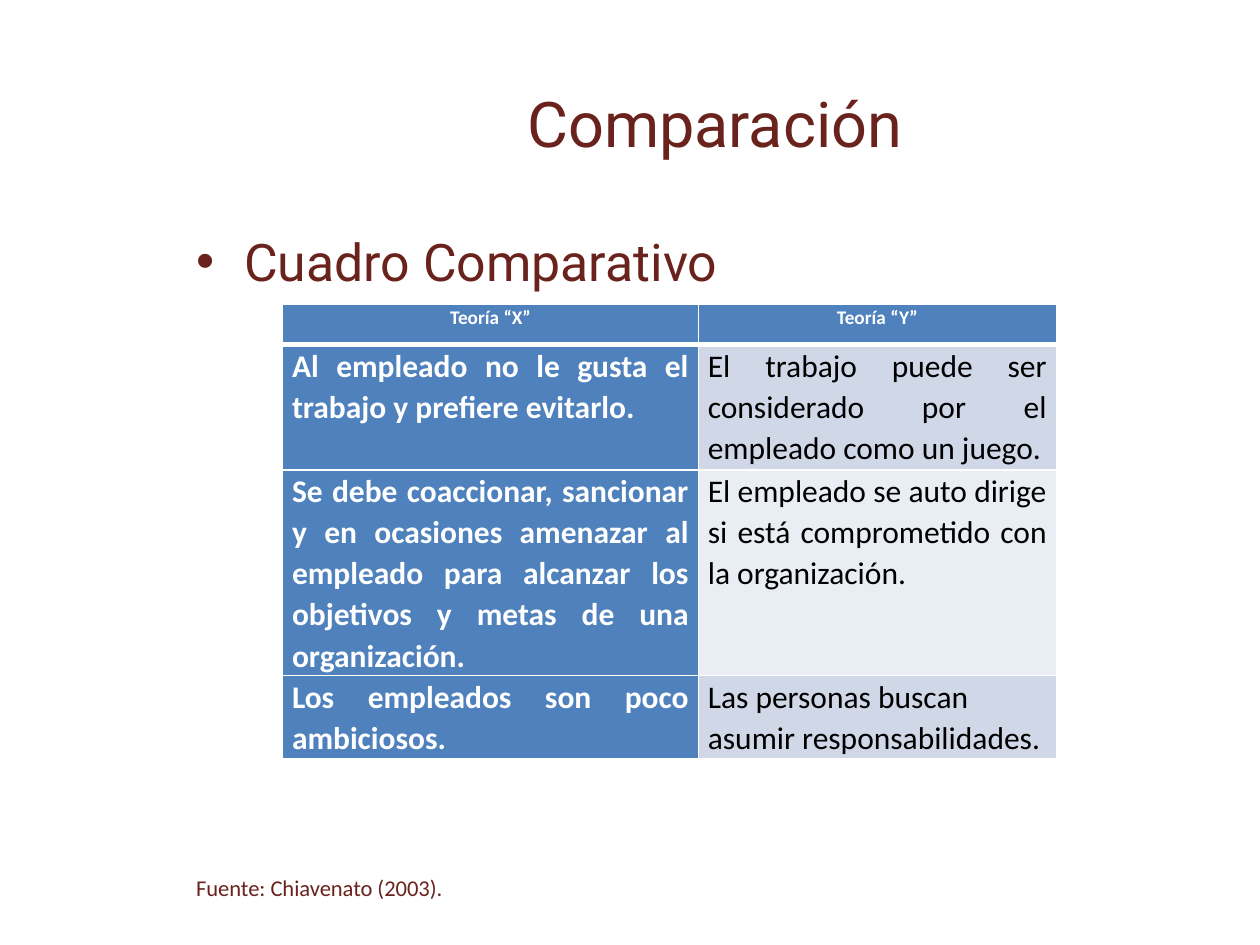
from lxml.etree import SubElement
from pptx import Presentation
from pptx.dml.color import RGBColor
from pptx.enum.text import MSO_ANCHOR as Anchor, PP_ALIGN as Align
from pptx.oxml.ns import qn
from pptx.util import Pt

MAROON, WHITE, BLACK = "6A221D", "FFFFFF", "000000"
BLUE, PALE_BLUE, PALEST_BLUE = "4F81BD", "D0D8E8", "E9EDF4"

HEADERS = ("Teoría “X”", "Teoría “Y”")
COMPARISONS = (
    ("Al empleado no le gusta el trabajo y prefiere evitarlo.",
     "El trabajo puede ser considerado por el empleado como un juego."),
    ("Se debe coaccionar, sancionar y en ocasiones amenazar al empleado "
     "para alcanzar los objetivos y metas de una organización.",
     "El empleado se auto dirige si está comprometido con la organización."),
    ("Los empleados son poco ambiciosos.",
     "Las personas buscan asumir responsabilidades."),
)
COLUMN_WIDTHS = (237.6, 204.5)
ROW_HEIGHTS = (23, 71.5, 117.5, 47.5)


def color(hex_string):
    return RGBColor.from_string(hex_string)


def style(paragraph, font_name, size, hex_string, bold=False, align=Align.LEFT):
    paragraph.alignment = align
    font = paragraph.font
    font.name, font.size, font.bold = font_name, Pt(size), bold
    font.color.rgb = color(hex_string)


def add_text(slide, text, box, anchor=Anchor.TOP):
    """Add a wrapped text box and return its paragraph."""
    frame = slide.shapes.add_textbox(*map(Pt, box)).text_frame
    frame.word_wrap = True
    frame.vertical_anchor = anchor
    frame.text = text
    return frame.paragraphs[0]


def add_bullet(paragraph, indent):
    properties = paragraph._p.get_or_add_pPr()
    properties.set("marL", str(Pt(indent)))
    properties.set("indent", str(-Pt(indent)))
    SubElement(properties, qn("a:buFont"), typeface="Arial")
    SubElement(properties, qn("a:buChar"), char="•")


def set_borders(cell, **widths):
    """Draw white borders; the sides are given in the order L, R, T, B."""
    properties = cell._tc.get_or_add_tcPr()
    for side, width in widths.items():
        line = SubElement(properties, qn(f"a:ln{side}"), w=str(Pt(width)))
        fill = SubElement(line, qn("a:solidFill"))
        SubElement(fill, qn("a:srgbClr"), val=WHITE)


def fill_cell(cell, text, background, top_border, bottom_border, **text_style):
    set_borders(cell, L=1, R=1, T=top_border, B=bottom_border)
    cell.fill.solid()
    cell.fill.fore_color.rgb = color(background)
    cell.margin_left = cell.margin_right = Pt(5.4)
    cell.margin_top = cell.margin_bottom = 0
    cell.text = text
    paragraph = cell.text_frame.paragraphs[0]
    paragraph.line_spacing = 1.07
    style(paragraph, "Calibri", **text_style)


def add_comparison(slide):
    table = slide.shapes.add_table(
        len(ROW_HEIGHTS), len(COLUMN_WIDTHS), Pt(161.5), Pt(174),
        Pt(sum(COLUMN_WIDTHS)), Pt(sum(ROW_HEIGHTS))).table
    for column, width in zip(table.columns, COLUMN_WIDTHS):
        column.width = Pt(width)
    for row, height in zip(table.rows, ROW_HEIGHTS):
        row.height = Pt(height)

    for column, header in enumerate(HEADERS):
        fill_cell(table.cell(0, column), header, BLUE, 1, 3,
                  size=11, hex_string=WHITE, bold=True, align=Align.CENTER)
    last = len(COMPARISONS)
    for row, (theory_x, theory_y) in enumerate(COMPARISONS, start=1):
        top_border = 3 if row == 1 else 1
        fill_cell(table.cell(row, 0), theory_x, BLUE, top_border, 1,
                  size=18, hex_string=WHITE, bold=True, align=Align.JUSTIFY)
        fill_cell(table.cell(row, 1), theory_y,
                  PALE_BLUE if row % 2 else PALEST_BLUE, top_border, 1,
                  size=18, hex_string=BLACK,
                  align=Align.LEFT if row == last else Align.JUSTIFY)


def main():
    presentation = Presentation()
    presentation.slide_width, presentation.slide_height = Pt(720), Pt(540)
    slide = presentation.slides.add_slide(presentation.slide_layouts[6])

    title = add_text(slide, "Comparación", (133, 25, 551, 90), Anchor.MIDDLE)
    style(title, "Roboto", 36, MAROON, align=Align.CENTER)

    subtitle = add_text(slide, "Cuadro Comparativo", (105, 127.5, 579, 45))
    add_bullet(subtitle, 27.4)
    style(subtitle, "Roboto", 29.6, MAROON)

    add_comparison(slide)

    citation = add_text(slide, "Fuente: Chiavenato (2003).", (105, 496, 579, 24))
    style(citation, "Calibri", 12.9, MAROON)

    presentation.save("out.pptx")


if __name__ == "__main__":
    main()
